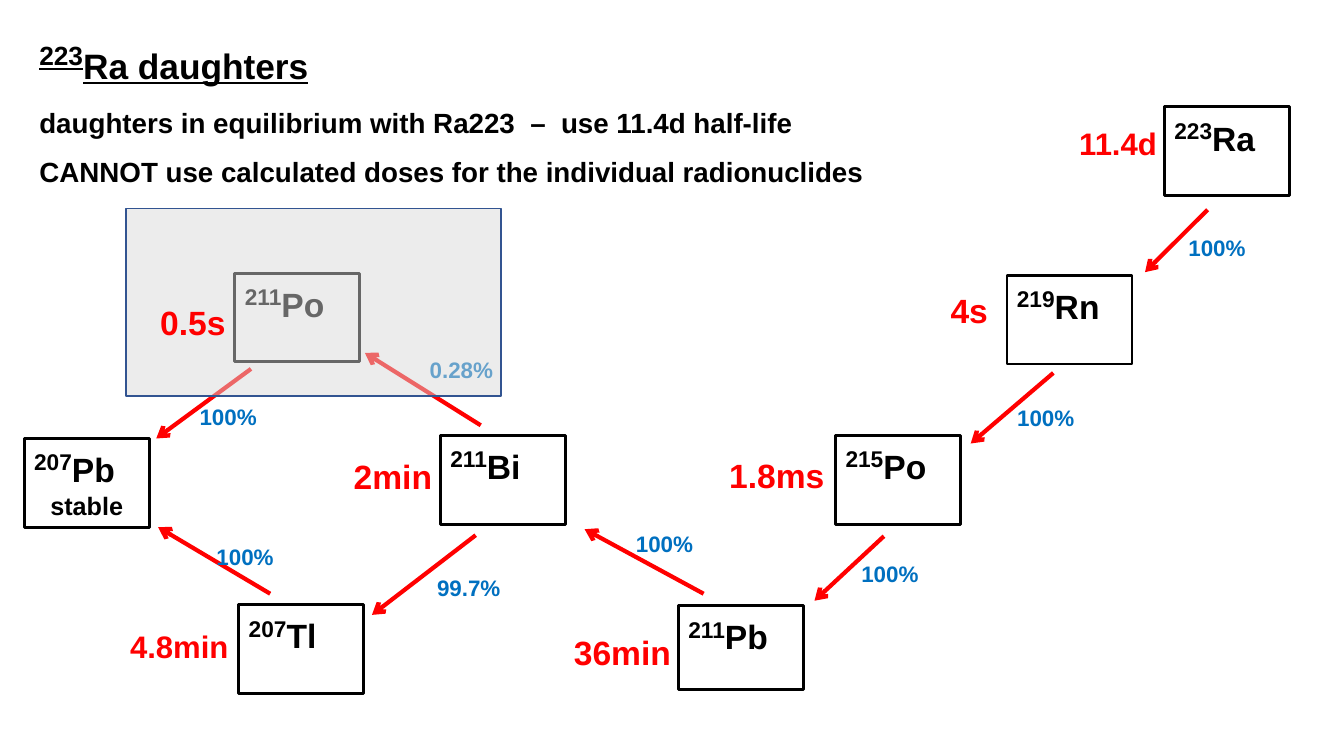
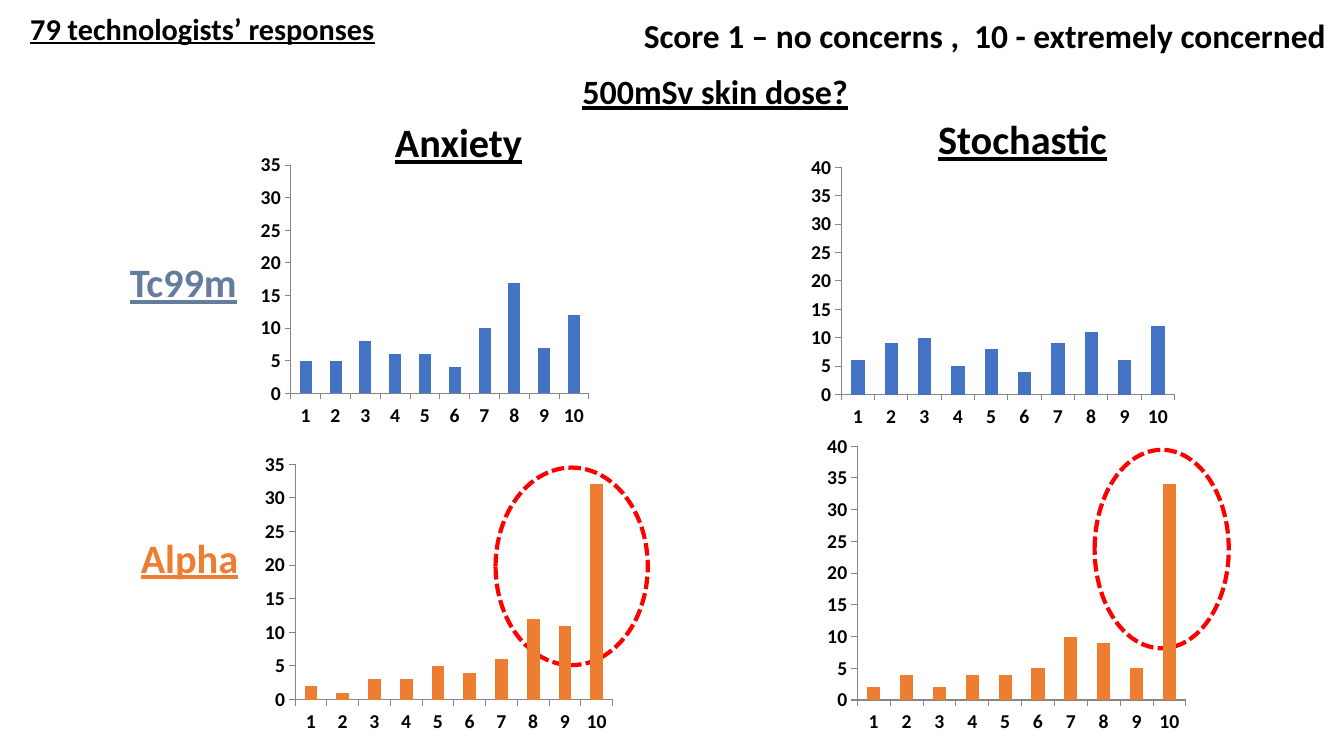
from dataclasses import dataclass
from lxml.etree import SubElement
from pptx import Presentation
from pptx.chart.data import CategoryChartData
from pptx.dml.color import RGBColor
from pptx.enum.chart import XL_CHART_TYPE as ChartType, XL_TICK_MARK as TickMark
from pptx.enum.dml import MSO_LINE as LineStyle
from pptx.enum.shapes import MSO_CONNECTOR as Connector, MSO_SHAPE as Shape
from pptx.enum.text import MSO_ANCHOR as Anchor, MSO_AUTO_SIZE as AutoSize, PP_ALIGN as Align
from pptx.oxml import parse_xml
from pptx.oxml.ns import nsdecls, qn
from pptx.util import Pt


@dataclass(frozen=True)
class Theme:
    black: str = "000000"
    red: str = "FF0000"
    percent_blue: str = "0070C0"
    veil: str = "D9D9D9"
    veil_line: str = "325491"
    axis: str = "868686"
    technetium_bar: str = "4472C4"
    technetium_text: str = "657D9D"
    alpha: str = "ED7D31"
    chain_font: str = "Arial"
    survey_font: str = "Calibri"
    mass_size: float = 28
    symbol_size: float = 24
    note_size: float = 18
    percent_size: float = 16
    axis_size: float = 14
    heading_size: float = 28.8


@dataclass(frozen=True)
class Box:
    left: float
    top: float
    width: float
    height: float

    def inside(self, left, top, width, height):
        return Box(self.left + left, self.top + top, width, height)

    def points(self):
        return [Pt(value) for value in (self.left, self.top, self.width, self.height)]


THEME = Theme()
PLOT = (0.1, 0.06, 0.88, 0.8)
PERCENT_BOX = (68, 34)
HALF_LIFE_BOX = (110, 38)

# mass, symbol, box, half-life, its centre from the box corner, its size
NUCLIDES = [
    ("219", "Rn", Box(719.3, 196.6, 89.3, 63.4), "4s", (-27, 25), 24),
    ("215", "Po", Box(596.9, 311, 89.3, 63.4), "1.8ms", (-42, 28), 24),
    ("207", "Tl", Box(170.6, 432, 89.3, 63.4), "4.8min", (-42.5, 29.5), 22.2),
    ("207", "Pb", Box(17.3, 313.2, 89.3, 63.4), "", (0, 0), 24),
    ("211", "Po", Box(167.8, 195.1, 89.3, 63.4), "0.5s", (-30, 35), 24),
    ("211", "Bi", Box(314.6, 311, 89.3, 63.4), "2min", (-34, 29), 24),
    ("211", "Pb", Box(484.6, 432.7, 89.3, 59.8), "36min", (-40, 33), 24),
]
RADIUM = ("223", "Ra", Box(831.6, 76.3, 89.3, 63.4), "11.4d", (-33, 26), 22.2)

# arrow start, arrow end, share, its centre from the arrow's middle
RARE_DECAY = ((343.4, 303.8), (260.6, 252), "0.28%", (27.5, -14))
DECAYS = [
    ((862.6, 149.8), (817.9, 194.4), "100%", (29, 4.5)),
    ((631.4, 383), (581.8, 429.1), "100%", (29, 3.5)),
    ((752.4, 266.4), (693.4, 316.8), "100%", (24, 6.5)),
    ((339.8, 382.3), (265.7, 439.2), "99.7%", (32, 9)),
    ((179.3, 263.5), (111.6, 313.2), "100%", (17.5, 9.5)),
    ((502.6, 424.1), (417.6, 378), "100%", (14.5, -12.5)),
    ((193, 424.1), (113, 376.6), "100%", (22, -3)),
]

HEADINGS = [
    ("Anxiety", Box(275, 80, 163, 42), THEME.heading_size, THEME.black, True),
    ("Stochastic", Box(663, 78, 182, 42), THEME.heading_size, THEME.black, True),
    ("Alpha", Box(93.5, 377, 93, 42), THEME.heading_size, THEME.alpha, True),
    ("Tc99m", Box(85.7, 180, 112, 42), THEME.heading_size, THEME.technetium_text, True),
    ("Score 1 – no concerns ,  10 - extremely concerned",
     Box(452.8, 5, 507, 40), 23.9, THEME.black, False),
    ("500mSv skin dose?", Box(409, 44, 268, 42), 24.3, THEME.black, True),
]

# box, values, colour, axis maximum, plot area, ring within the box
CHARTS = [
    (Box(183.6, 105.8, 241.9, 203.8), (5, 5, 8, 6, 6, 4, 10, 17, 7, 12),
     THEME.technetium_bar, 35, PLOT, None),
    (Box(185, 319, 257.8, 210.2), (2, 1, 3, 3, 5, 4, 6, 12, 11, 32),
     THEME.alpha, 35, PLOT, (169, 15, 108.7, 141.1)),
    (Box(573.8, 107.3, 270.7, 203), (6, 9, 10, 5, 8, 4, 9, 11, 6, 12),
     THEME.technetium_bar, 40, PLOT, None),
    (Box(578.9, 305.3, 279.4, 223.9), (2, 4, 2, 4, 4, 5, 10, 9, 5, 34),
     THEME.alpha, 40, (0.12, 0.06, 0.84, 0.81), (203, 16, 95.8, 141.8)),
]


def rgb(color):
    return RGBColor.from_string(color)


def style_font(font, name, size, color, underline=None):
    font.name, font.size, font.bold, font.underline = name, Pt(size), True, underline
    font.color.rgb = rgb(color)


def style_line(shape, color, width):
    shape.line.color.rgb = rgb(color)
    shape.line.width = Pt(width)


def place(shape, box):
    shape.left, shape.top, shape.width, shape.height = box.points()


def prepare_frame(shape, anchor):
    frame = shape.text_frame
    frame.word_wrap, frame.auto_size, frame.vertical_anchor = True, AutoSize.NONE, anchor
    return frame


def write_line(shape, text, align, *style):
    frame = prepare_frame(shape, Anchor.MIDDLE)
    frame.text = text
    frame.paragraphs[0].alignment = align
    style_font(frame.paragraphs[0].runs[0].font, *style)


def add_label(slide, text, center, size, *style):
    """Add a text box centred on a point."""
    (x, y), (width, height) = center, size
    box = Box(x - width / 2, y - height / 2, width, height)
    write_line(slide.shapes.add_textbox(*box.points()), text, Align.CENTER, *style)


def write_isotope(paragraph, mass, symbol, mass_size, symbol_size, underline=None):
    """Write a symbol with its mass number raised before it."""
    for text, size in ((mass, mass_size), (symbol, symbol_size)):
        run = paragraph.add_run()
        run.text = text
        style_font(run.font, THEME.chain_font, size, THEME.black, underline)
    paragraph.runs[0].font._element.set("baseline", "30000")


def fill_nuclide(shape, mass, symbol, note=""):
    style_line(shape, THEME.black, 2)
    frame = prepare_frame(shape, Anchor.TOP)
    paragraph = frame.paragraphs[0]
    paragraph.alignment, paragraph.space_before = Align.LEFT, Pt(0)
    write_isotope(paragraph, mass, symbol, THEME.mass_size, THEME.symbol_size)
    if note:
        paragraph = frame.add_paragraph()
        paragraph.text, paragraph.alignment = note, Align.CENTER
        style_font(paragraph.runs[0].font, THEME.chain_font, THEME.note_size, THEME.black)


def add_nuclide(slide, mass, symbol, box):
    shape = slide.shapes.add_shape(Shape.RECTANGLE, *box.points())
    shape.shadow.inherit = False
    shape.fill.background()
    fill_nuclide(shape, mass, symbol, "stable" if (mass, symbol) == ("207", "Pb") else "")


def place_radium(body):
    mass, symbol, box = RADIUM[:3]
    place(body, box)
    fill_nuclide(body, mass, symbol)
    properties = body.text_frame.paragraphs[0]._p.get_or_add_pPr()
    properties.set("marL", "0")
    properties.set("indent", "0")
    properties.append(parse_xml(f"<a:buNone {nsdecls('a')}/>"))


def add_half_life(slide, box, text, offset, size):
    center = (box.left + offset[0], box.top + offset[1])
    add_label(slide, text, center, HALF_LIFE_BOX, THEME.chain_font, size, THEME.red)


def add_arrow(slide, start, end):
    arrow = slide.shapes.add_connector(
        Connector.STRAIGHT, *(Pt(value) for value in start + end))
    style_line(arrow, THEME.red, 3)
    SubElement(arrow.line._get_or_add_ln(), qn("a:tailEnd"), type="arrow")
    SubElement(arrow._element.spPr, qn("a:effectLst"))


def add_share(slide, start, end, text, offset):
    center = [(a + b) / 2 + shift for a, b, shift in zip(start, end, offset)]
    add_label(slide, text, center, PERCENT_BOX,
              THEME.chain_font, THEME.percent_size, THEME.percent_blue)


def add_veil(slide, box):
    veil = slide.shapes.add_shape(Shape.RECTANGLE, *box.points())
    veil.shadow.inherit = False
    veil.fill.solid()
    veil.fill.fore_color.rgb = rgb(THEME.veil)
    color = veil._element.spPr.find(qn("a:solidFill"))[0]
    SubElement(color, qn("a:alpha"), val="48000")
    style_line(veil, THEME.veil_line, 1)


def write_chain_title(title, box):
    place(title, box)
    frame = prepare_frame(title, Anchor.MIDDLE)
    write_isotope(frame.paragraphs[0], "223", "Ra daughters", 32.4, 25.2, True)
    for text in ("daughters in equilibrium with Ra223  –  use 11.4d half-life",
                 "CANNOT use calculated doses for the individual radionuclides"):
        paragraph = frame.add_paragraph()
        paragraph.text = text
        style_font(paragraph.runs[0].font, THEME.chain_font, 19.8, THEME.black)
    for paragraph in frame.paragraphs:
        paragraph.alignment, paragraph.line_spacing = Align.LEFT, 1.5


def build_decay_slide(presentation):
    slide = presentation.slides.add_slide(presentation.slide_layouts[1])
    write_chain_title(slide.shapes.title, Box(20.9, 0, 630.7, 139.7))
    place_radium(slide.placeholders[1])
    for mass, symbol, box, *_ in NUCLIDES:
        add_nuclide(slide, mass, symbol, box)
    for start, end, *_ in DECAYS + [RARE_DECAY]:
        add_arrow(slide, start, end)
    add_share(slide, *RARE_DECAY)
    add_veil(slide, Box(90, 149, 267.8, 133.9))
    for _, _, box, text, offset, size in [RADIUM] + NUCLIDES:
        if text:
            add_half_life(slide, box, text, offset, size)
    for decay in DECAYS:
        add_share(slide, *decay)


def set_plot_area(chart, fractions):
    values = "".join(f'<c:{tag} val="{value}"/>' for tag, value in zip("xywh", fractions))
    layout = parse_xml(
        f'<c:layout {nsdecls("c")}><c:manualLayout><c:layoutTarget val="inner"/>'
        f'<c:xMode val="edge"/><c:yMode val="edge"/>{values}</c:manualLayout></c:layout>')
    plot_area = chart._chartSpace.chart.plotArea
    for old in plot_area.findall(qn("c:layout")):
        plot_area.remove(old)
    plot_area.insert(0, layout)


def add_score_chart(slide, box, values, color, maximum, plot_fractions):
    data = CategoryChartData()
    data.categories = [str(score) for score in range(1, 11)]
    data.add_series("Series 1", values)
    chart = slide.shapes.add_chart(ChartType.COLUMN_CLUSTERED, *box.points(), data).chart
    chart.has_legend = chart.has_title = False
    chart.font.name, chart.font.size = THEME.survey_font, Pt(10)
    plot = chart.plots[0]
    plot.gap_width, plot.vary_by_categories = 150, False
    fill = plot.series[0].format.fill
    fill.solid()
    fill.fore_color.rgb = rgb(color)
    for axis in (chart.category_axis, chart.value_axis):
        axis.has_major_gridlines = False
        axis.major_tick_mark, axis.minor_tick_mark = TickMark.OUTSIDE, TickMark.NONE
        axis.format.line.color.rgb = rgb(THEME.axis)
        style_font(axis.tick_labels.font, THEME.survey_font, THEME.axis_size, THEME.black)
    scale = chart.value_axis
    scale.minimum_scale, scale.maximum_scale, scale.major_unit = 0, maximum, 5
    set_plot_area(chart, plot_fractions)


def add_ring(slide, box):
    ring = slide.shapes.add_shape(Shape.OVAL, *box.points())
    ring.shadow.inherit = False
    ring.fill.background()
    style_line(ring, THEME.red, 3)
    ring.line.dash_style = LineStyle.SQUARE_DOT


def build_survey_slide(presentation):
    slide = presentation.slides.add_slide(presentation.slide_layouts[5])
    title = slide.shapes.title
    place(title, Box(14.4, 0, 268, 40))
    write_line(title, "79 technologists’ responses", Align.LEFT,
               THEME.survey_font, 21.6, THEME.black, True)
    for text, box, size, color, underline in HEADINGS:
        write_line(slide.shapes.add_textbox(*box.points()), text, Align.LEFT,
                   THEME.survey_font, size, color, underline)
    for box, *chart, ring in CHARTS:
        if ring:
            add_ring(slide, box.inside(*ring))
        add_score_chart(slide, box, *chart)


def main():
    presentation = Presentation()
    presentation.slide_width, presentation.slide_height = Pt(960), Pt(540)
    build_decay_slide(presentation)
    build_survey_slide(presentation)
    presentation.save("out.pptx")


if __name__ == "__main__":
    main()
